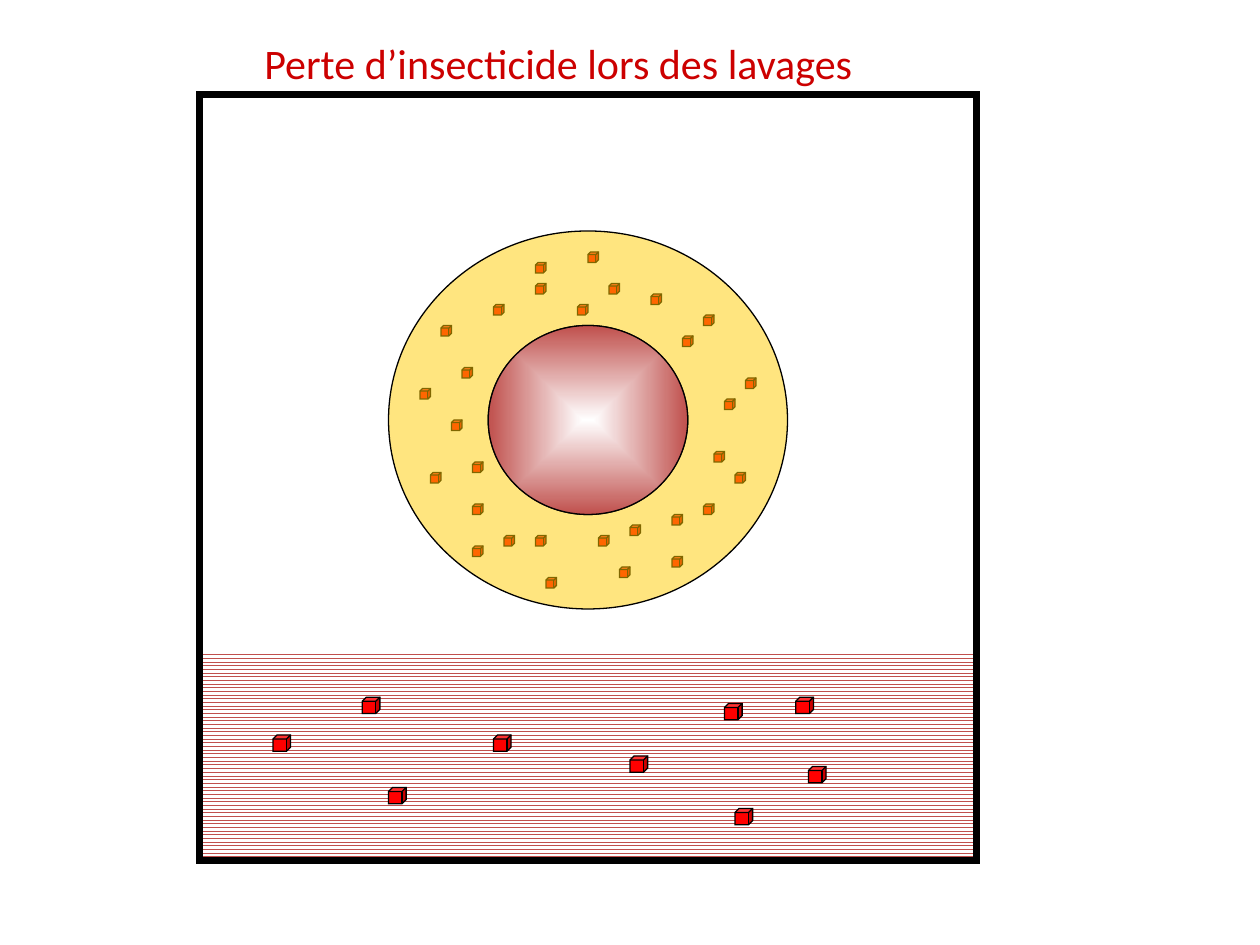
from lxml.etree import SubElement
from pptx import Presentation
from pptx.dml.color import RGBColor
from pptx.enum.dml import MSO_PATTERN
from pptx.enum.shapes import MSO_SHAPE as SHAPE
from pptx.oxml.ns import qn
from pptx.util import Inches, Pt

COLOURS = {
    "title": "CC0000",
    "insecticide": "FF0000",
    "coating": "FFCC00",
    "fibre": "C0504D",
    "white": "FFFFFF",
    "outline": "000000",
}
# The drawing sits on a grid of twelfths of an inch
GRID = Inches(1) / 12


def grid(*steps):
    return [round(step * GRID) for step in steps]


def style(shape, fill=None, line_width=0.75):
    """Set a plain fill and a black mitred outline; None leaves the shape empty."""
    shape.shadow.inherit = False
    if fill:
        shape.fill.solid()
        shape.fill.fore_color.rgb = RGBColor.from_string(COLOURS[fill])
    else:
        shape.fill.background()
    shape.line.color.rgb = RGBColor.from_string(COLOURS["outline"])
    shape.line.width = Pt(line_width)
    SubElement(shape._element.spPr.find(qn("a:ln")), qn("a:miter"), lim="800000")


prs = Presentation()
prs.slide_width, prs.slide_height = Inches(10), Inches(7.5)
slide = prs.slides.add_slide(prs.slide_layouts[6])

# Wash water with the lost insecticide
wash = slide.shapes.add_group_shape().shapes
water = wash.add_shape(SHAPE.RECTANGLE, *grid(19, 62, 74, 20))
water.shadow.inherit = False
water.fill.patterned()
water.fill.pattern = MSO_PATTERN.ZIG_ZAG
water.fill.fore_color.rgb = RGBColor.from_string(COLOURS["fibre"])
water.fill.back_color.rgb = RGBColor.from_string(COLOURS["white"])
water.line.fill.background()

lost_crystals = [
    (77, 73), (69, 67), (75.8, 66.4), (60, 72), (70, 77),
    (47, 70), (37, 75), (26, 70), (34.5, 66.4),
]
for x, y in lost_crystals:
    crystal = wash.add_shape(SHAPE.CUBE, *grid(x, y), Inches(0.14), Inches(0.13))
    style(crystal, "insecticide")

# Frame
frame = slide.shapes.add_shape(SHAPE.RECTANGLE, *grid(19, 9, 74, 73))
style(frame, line_width=4)

# Insecticide held in the coating
thread = slide.shapes.add_group_shape().shapes
held_crystals = [
    (68, 43), (65, 32), (71, 36), (64, 49), (62, 28), (44, 35),
    (67, 30), (59, 54), (51, 51), (45, 48), (47, 29), (58, 27),
    (52, 55), (60, 50), (43, 40), (51, 27), (41, 45), (42, 31),
    (67, 48), (64, 53), (45, 52), (56, 24), (69, 38), (70, 45),
    (57, 51), (40, 37), (51, 25), (55, 29), (45, 44), (48, 51),
]
for x, y in held_crystals:
    style(thread.add_shape(SHAPE.CUBE, *grid(x, y, 1, 1)), "insecticide")

# Translucent coating: quarter points of the rim and, turned the other way, of the hole
CENTRE_X, CENTRE_Y = 56, 40
rim, hole = [
    [grid(CENTRE_X + dx, CENTRE_Y + dy)
     for dx, dy in [(-rx, 0), (0, -ry), (rx, 0), (0, ry), (-rx, 0)]]
    for rx, ry in [(19, 18), (9.5, -9)]
]
ring = thread.build_freeform(*rim[0])
ring.add_line_segments(rim[1:], close=True)
ring.move_to(*hole[0])
ring.add_line_segments(hole[1:], close=True)
coating = ring.convert_to_shape()
style(coating, "coating")
coating_colour = coating._element.spPr.find(qn("a:solidFill"))[0]
SubElement(coating_colour, qn("a:alpha"), val="50000")

# Round each quarter of the ring into an elliptical arc
ARC = 0.55
quarter = 0
for step in coating._element.spPr.find(".//" + qn("a:path")):
    if step.tag == qn("a:close"):
        continue
    end_x, end_y = int(step[0].get("x")), int(step[0].get("y"))
    if step.tag == qn("a:lnTo"):
        corner_x, corner_y = (start_x, end_y) if quarter % 2 == 0 else (end_x, start_y)
        quarter += 1
        step.tag = qn("a:cubicBezTo")
        step.remove(step[0])
        for x, y in [
            (start_x + ARC * (corner_x - start_x), start_y + ARC * (corner_y - start_y)),
            (end_x + ARC * (corner_x - end_x), end_y + ARC * (corner_y - end_y)),
            (end_x, end_y),
        ]:
            SubElement(step, qn("a:pt"), x=str(round(x)), y=str(round(y)))
    start_x, start_y = end_x, end_y

# Fibre core, shaded outwards from its centre
fibre = thread.add_shape(SHAPE.OVAL, *grid(CENTRE_X - 9.5, CENTRE_Y - 9, 19, 18))
style(fibre)
fibre.fill.gradient()
for stop, colour in zip(fibre.fill.gradient_stops, ["white", "fibre"]):
    stop.color.rgb = RGBColor.from_string(COLOURS[colour])
gradient = fibre._element.spPr.find(qn("a:gradFill"))
gradient.remove(gradient.find(qn("a:lin")))
shading = SubElement(gradient, qn("a:path"), path="shape")
SubElement(shading, qn("a:fillToRect"), dict.fromkeys("ltrb", "50000"))

# Title
title = slide.shapes.add_textbox(Inches(2), Inches(0.25), Inches(5.92), Inches(0.5))
title.text_frame.word_wrap = True
title.text_frame.text = "Perte d’insecticide lors des lavages"
heading = title.text_frame.paragraphs[0]
heading.space_before = Pt(12)
heading.runs[0].font.name = "Calibri"
heading.runs[0].font.size = Pt(24)
heading.runs[0].font.color.rgb = RGBColor.from_string(COLOURS["title"])

prs.save("out.pptx")
